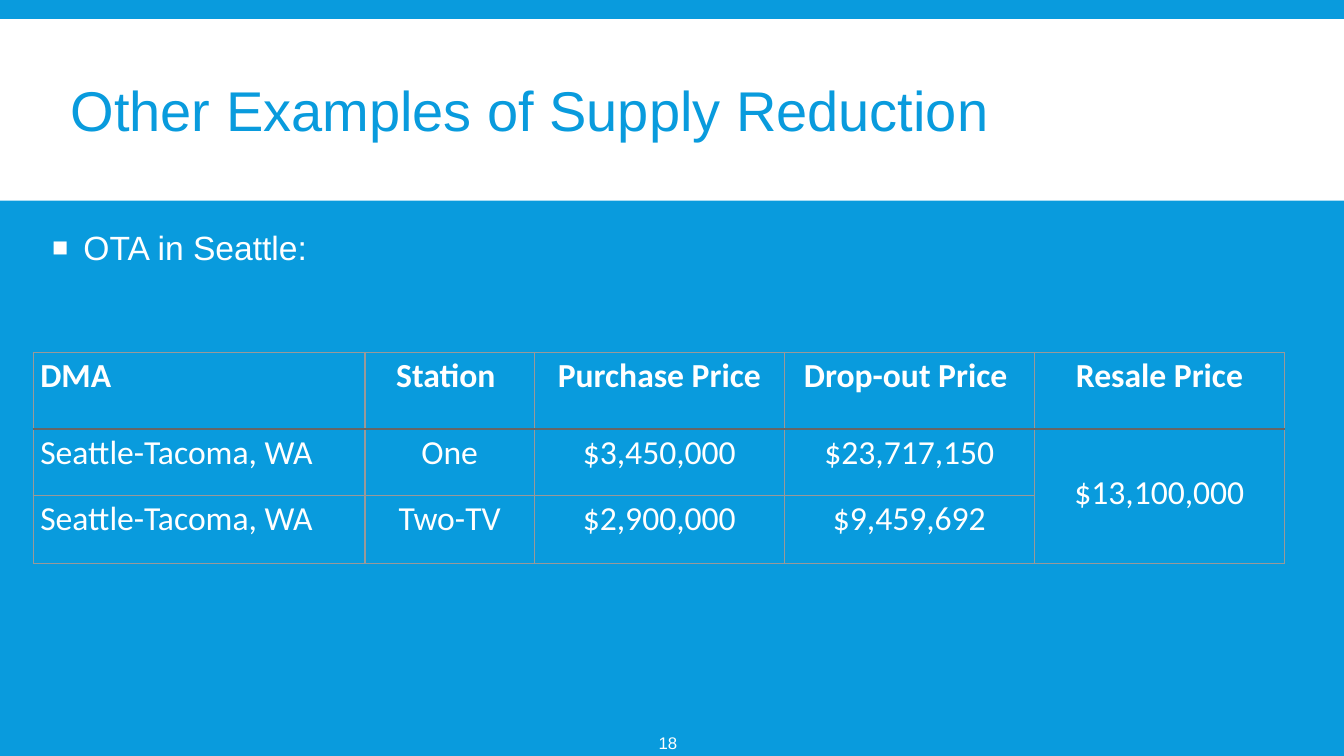
from dataclasses import dataclass

from lxml.etree import SubElement
from pptx import Presentation
from pptx.dml.color import RGBColor
from pptx.enum.shapes import MSO_SHAPE
from pptx.enum.text import MSO_ANCHOR, MSO_AUTO_SIZE, PP_ALIGN
from pptx.oxml.ns import qn
from pptx.util import Inches, Pt

BLUE = RGBColor(0x09, 0x9B, 0xDD)
WHITE = RGBColor(0xFF, 0xFF, 0xFF)
GRID_GRAY = RGBColor(0x99, 0x99, 0x99)
HEADER_GRAY = RGBColor(0x66, 0x66, 0x66)


@dataclass(frozen=True)
class Column:
    width: float
    texts: tuple
    align: PP_ALIGN = PP_ALIGN.CENTER


COLUMNS = (
    Column(3.29, ("DMA", "Seattle-Tacoma, WA", "Seattle-Tacoma, WA"), PP_ALIGN.JUSTIFY),
    Column(1.68, ("Station ", "One", "Two-TV")),
    Column(2.48, ("Purchase Price", "$3,450,000", "$2,900,000")),
    Column(2.48, ("Drop-out Price ", "$23,717,150", "$9,459,692")),
    Column(2.48, ("Resale Price", "$13,100,000", "")),
)
ROW_HEIGHTS = (0.76, 0.66, 0.67)


def write_text(frame, text: str, *, size: float = 24, font: str = "Arial",
               color: RGBColor = WHITE, bold: bool = False,
               align: PP_ALIGN = PP_ALIGN.LEFT, line_spacing: float = 1.0,
               anchor: MSO_ANCHOR = MSO_ANCHOR.TOP):
    frame.word_wrap = True
    frame.vertical_anchor = anchor
    paragraph = frame.paragraphs[0]
    paragraph.alignment = align
    paragraph.line_spacing = line_spacing
    run = paragraph.add_run()
    run.text = text
    run.font.size = Pt(size)
    run.font.name = font
    run.font.bold = bold
    run.font.color.rgb = color
    return paragraph


def add_bullet(paragraph) -> None:
    properties = paragraph._p.get_or_add_pPr()
    properties.set("marL", str(Inches(0.5)))
    properties.set("indent", str(Inches(-0.31)))
    color = SubElement(properties, qn("a:buClr"))
    SubElement(color, qn("a:srgbClr"), val=str(WHITE))
    SubElement(properties, qn("a:buSzPct"), val="80000")
    SubElement(properties, qn("a:buFont"), typeface="Arial")
    SubElement(properties, qn("a:buChar"), char="■")


def add_border(cell, side: str, color: RGBColor, width: float) -> None:
    properties = cell._tc.get_or_add_tcPr()
    line = SubElement(properties, qn(f"a:ln{side}"), w=str(Pt(width)))
    fill = SubElement(line, qn("a:solidFill"))
    SubElement(fill, qn("a:srgbClr"), val=str(color))


def format_cell(cell, row: int) -> None:
    cell.margin_left = cell.margin_right = Inches(0.07)
    cell.margin_top = cell.margin_bottom = 0
    header_sides = {0: "B", 1: "T"}
    for side in "LRTB":
        if header_sides.get(row) == side:
            add_border(cell, side, HEADER_GRAY, 1.5)
        else:
            add_border(cell, side, GRID_GRAY, 1)
    cell.fill.background()


def add_title(slide) -> None:
    title = slide.shapes.title
    title.left, title.top = Inches(0.6), Inches(0.31)
    title.width, title.height = Inches(11), Inches(1.65)
    title.text_frame.auto_size = MSO_AUTO_SIZE.NONE
    write_text(title.text_frame, "Other Examples of Supply Reduction", size=40,
               color=BLUE, line_spacing=0.85, anchor=MSO_ANCHOR.MIDDLE)
    band = slide.shapes.add_shape(MSO_SHAPE.RECTANGLE, 0, Inches(0.19),
                                  Inches(13.33), Inches(1.8))
    band.shadow.inherit = False
    band.fill.solid()
    band.fill.fore_color.rgb = WHITE
    band.line.fill.background()
    title.element.addprevious(band.element)


def add_price_table(slide) -> None:
    frame = slide.shapes.add_table(
        len(ROW_HEIGHTS), len(COLUMNS), Inches(0.33), Inches(3.5),
        Inches(sum(column.width for column in COLUMNS)), Inches(sum(ROW_HEIGHTS)))
    table = frame.table
    table.first_row = table.horz_banding = False
    for row, height in enumerate(ROW_HEIGHTS):
        table.rows[row].height = Inches(height)
    for index, column in enumerate(COLUMNS):
        table.columns[index].width = Inches(column.width)
        for row, text in enumerate(column.texts):
            cell = table.cell(row, index)
            format_cell(cell, row)
            if text:
                write_text(cell.text_frame, text, font="Calibri", bold=row == 0,
                           align=column.align, line_spacing=1.07)
    resale_cell = table.cell(1, len(COLUMNS) - 1)
    resale_cell.merge(table.cell(2, len(COLUMNS) - 1))
    resale_cell.margin_top = Inches(0.4)


def main() -> None:
    presentation = Presentation()
    presentation.slide_width = Inches(13.33)
    presentation.slide_height = Inches(7.5)
    slide = presentation.slides.add_slide(presentation.slide_layouts[5])
    slide.background.fill.solid()
    slide.background.fill.fore_color.rgb = BLUE

    add_title(slide)

    body = slide.shapes.add_textbox(Inches(0.23), Inches(2.2), Inches(12.3), Inches(4.6))
    paragraph = write_text(body.text_frame, "OTA in Seattle:")
    paragraph.space_before = Pt(2)
    add_bullet(paragraph)

    number = slide.shapes.add_textbox(Inches(6.15), Inches(7.17), Inches(1), Inches(0.4))
    number.text_frame.margin_left = Inches(0.05)
    write_text(number.text_frame, "18", size=12, align=PP_ALIGN.CENTER,
               anchor=MSO_ANCHOR.MIDDLE)

    add_price_table(slide)
    presentation.save("out.pptx")


if __name__ == "__main__":
    main()
